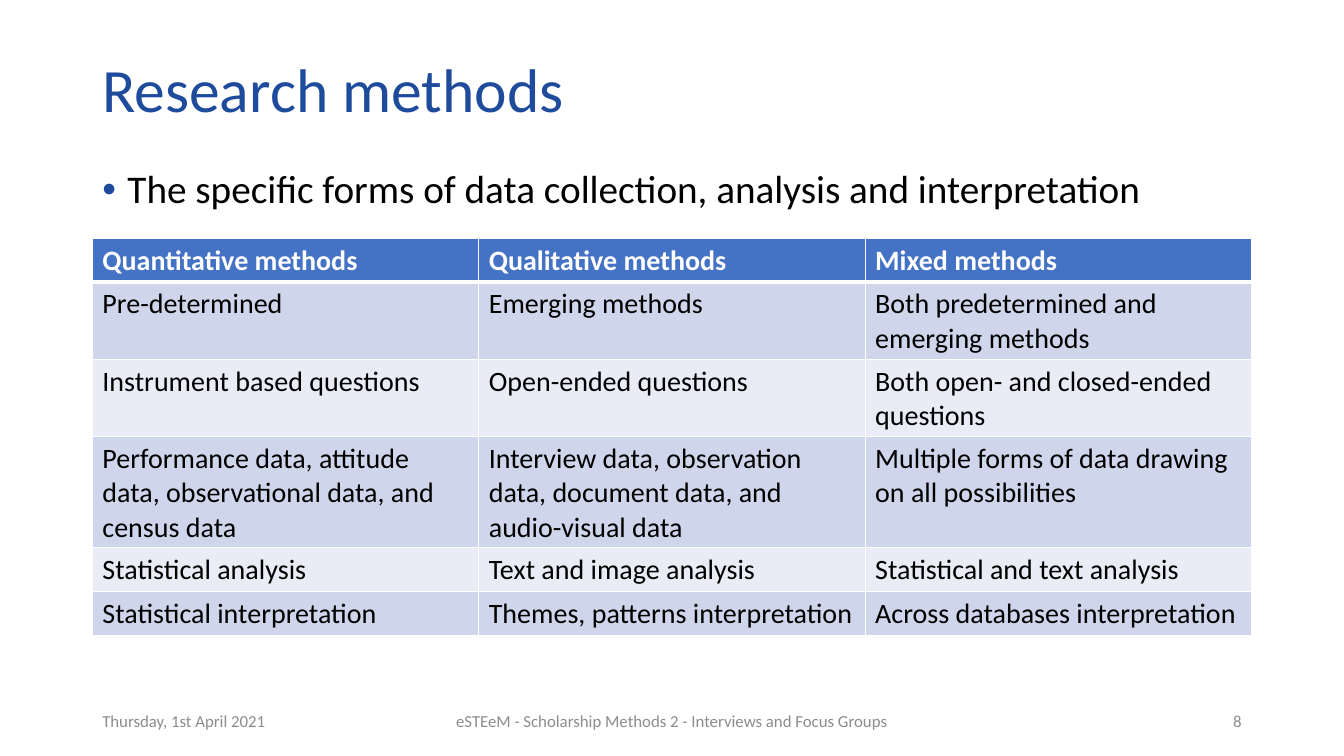
from lxml.etree import SubElement
from pptx import Presentation
from pptx.dml.color import RGBColor
from pptx.enum.text import MSO_ANCHOR, PP_ALIGN
from pptx.oxml.ns import qn
from pptx.util import Pt

PX = 9525  # EMU per px, 96 px to the inch
THEME = {
    "font": "Calibri",
    "title": {"size": 44, "color": "1E4B9B"},
    "body": {"size": 28, "color": "000000"},
    "footer": {"size": 12, "color": "8C8C8C"},
    "header": {"size": 20, "color": "FFFFFF", "bold": True},
    "cell": {"size": 20, "color": "000000"},
    "bullet": "1E4B9B",
    "border": "FFFFFF",
    "header_fill": "4472C4",
    "band_fills": ["E9EBF5", "CFD5EA"],
}
LEFT, WIDTH = 88, 1104


def write(paragraph, text, style):
    paragraph.text = text
    font = paragraph.font
    values = {"name": THEME["font"], "size": Pt(style["size"]), "bold": style.get("bold", False)}
    for name, value in values.items():
        setattr(font, name, value)
    font.color.rgb = RGBColor.from_string(style["color"])


def add_text(box, text, style, anchor=MSO_ANCHOR.MIDDLE, **paragraph_format):
    """Add a wrapping text box at box = (left, top, width, height) in px; return its paragraph."""
    frame = slide.shapes.add_textbox(*(length * PX for length in box)).text_frame
    frame.word_wrap = True
    frame.vertical_anchor = anchor
    paragraph = frame.paragraphs[0]
    for name, value in paragraph_format.items():
        setattr(paragraph, name, value)
    write(paragraph, text, style)
    return paragraph


presentation = Presentation()
presentation.slide_width = 1280 * PX
presentation.slide_height = 720 * PX
slide = presentation.slides.add_slide(presentation.slide_layouts[6])

# Title
add_text((LEFT, 38, WIDTH, 100), "Research methods", THEME["title"], line_spacing=0.9)

# Bulleted definition
definition = add_text(
    (LEFT, 157, WIDTH, 492),
    "The specific forms of data collection, analysis and interpretation",
    THEME["body"], MSO_ANCHOR.TOP, line_spacing=0.9,
)
properties = definition._p.get_or_add_pPr()
properties.set("marL", str(24 * PX))
properties.set("indent", str(-24 * PX))
bullet_color = properties.makeelement(qn("a:buClr"))
SubElement(bullet_color, qn("a:srgbClr"), val=THEME["bullet"])
bullet_font = properties.makeelement(qn("a:buFont"), typeface="Arial")
bullet = properties.makeelement(qn("a:buChar"), char="•")
properties.find(qn("a:lnSpc")).addnext(bullet_color)
bullet_color.addnext(bullet_font)
bullet_font.addnext(bullet)

# Footer
footers = [
    (LEFT, 288, "Thursday, 1st April 2021", PP_ALIGN.LEFT),
    (424, 432, "eSTEeM - Scholarship Methods 2 - Interviews and Focus Groups", PP_ALIGN.CENTER),
    (904, 288, "8", PP_ALIGN.RIGHT),
]
for left, width, text, alignment in footers:
    add_text((left, 667, width, 38), text, THEME["footer"], alignment=alignment)

# Comparison of methods
methods = [
    ("Quantitative methods", "Qualitative methods", "Mixed methods"),
    ("Pre-determined", "Emerging methods", "Both predetermined and emerging methods"),
    ("Instrument based questions", "Open-ended questions", "Both open- and closed-ended questions"),
    (
        "Performance data, attitude data, observational data, and census data",
        "Interview data, observation data, document data, and audio-visual data",
        "Multiple forms of data drawing on all possibilities",
    ),
    ("Statistical analysis", "Text and image analysis", "Statistical and text analysis"),
    ("Statistical interpretation", "Themes, patterns interpretation", "Across databases interpretation"),
]
row_height = 39
table = slide.shapes.add_table(
    len(methods), len(methods[0]),
    LEFT * PX, 227 * PX, WIDTH * PX, row_height * len(methods) * PX,
).table
for row, texts in enumerate(methods):
    is_header = row == 0
    fill = THEME["header_fill"] if is_header else THEME["band_fills"][row % 2]
    style = THEME["header" if is_header else "cell"]
    border_widths = {"L": 1, "R": 1, "T": 3 if row == 1 else 1, "B": 3 if is_header else 1}
    for column, text in enumerate(texts):
        cell = table.cell(row, column)
        write(cell.text_frame.paragraphs[0], text, style)
        cell_properties = cell._tc.get_or_add_tcPr()
        for side, points in border_widths.items():
            line = SubElement(cell_properties, qn(f"a:ln{side}"), w=str(Pt(points)))
            SubElement(SubElement(line, qn("a:solidFill")), qn("a:srgbClr"), val=THEME["border"])
        cell.fill.solid()
        cell.fill.fore_color.rgb = RGBColor.from_string(fill)

presentation.save("out.pptx")
